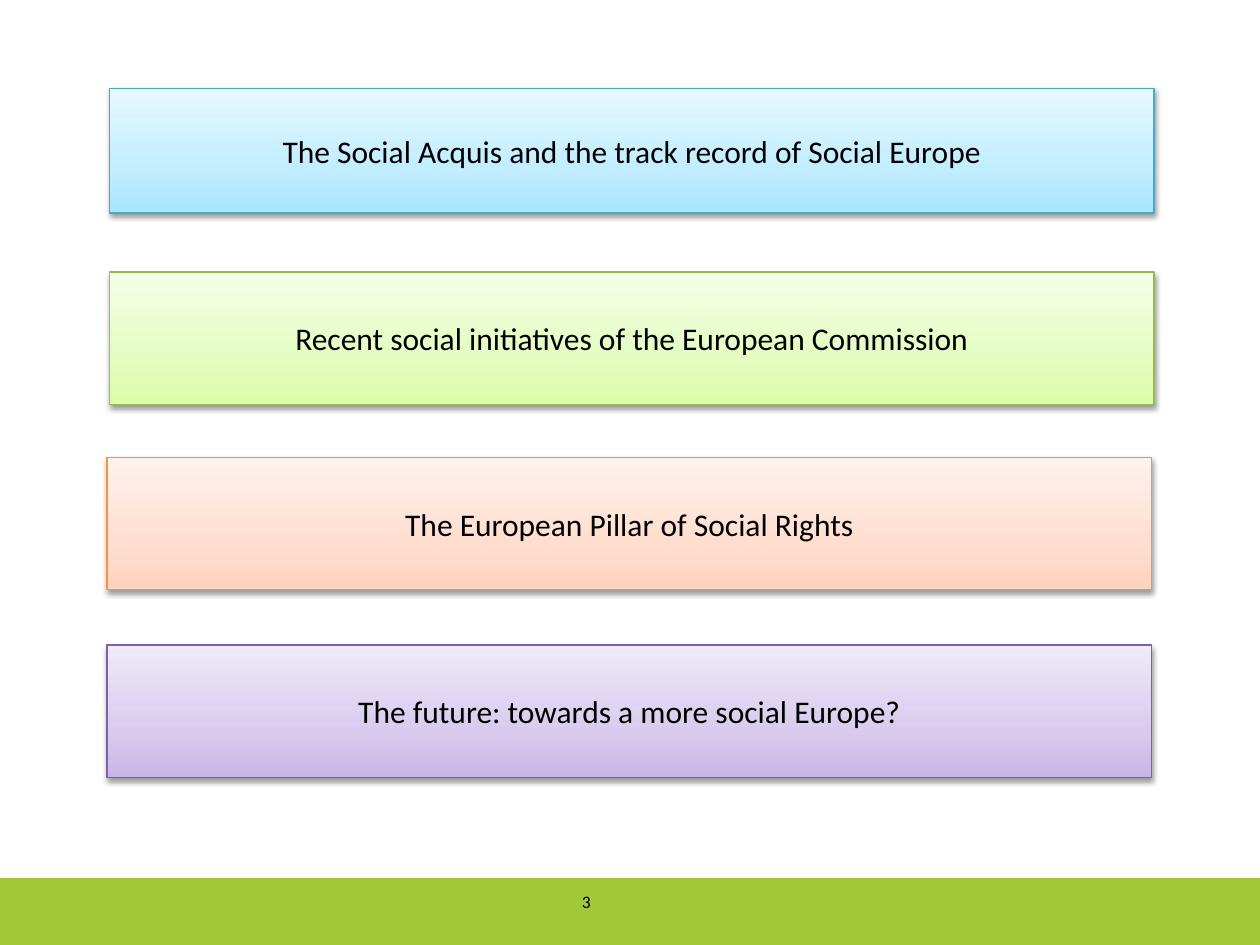
from copy import deepcopy

from pptx import Presentation
from pptx.dml.color import RGBColor
from pptx.enum.shapes import MSO_SHAPE
from pptx.enum.text import MSO_ANCHOR, PP_ALIGN
from pptx.oxml import parse_xml
from pptx.oxml.ns import nsdecls, qn
from pptx.util import Inches, Pt

RECT = MSO_SHAPE.RECTANGLE
MIDDLE = MSO_ANCHOR.MIDDLE
LEFT, CENTER = PP_ALIGN.LEFT, PP_ALIGN.CENTER

COLORS = {
    "text": "000000",
    "footer": "A2C83A",
    "blue": ("46AAC5", "A7E6FF", "C1EDFF", "E7F8FF"),
    "green": ("98B955", "DAFDA7", "E4FCC2", "F5FFE7"),
    "orange": ("F69240", "FFD2BD", "FFDED0", "FFF2ED"),
    "purple": ("7D60A0", "C9B5E8", "D8CBEE", "F0EAF9"),
}
STOPS = (0, 0.35, 1)
SHADOW = (
    f'<a:outerShdw {nsdecls("a")} blurRad="40000" dist="20000" dir="5400000" '
    'rotWithShape="0"><a:srgbClr val="000000"><a:alpha val="38000"/>'
    "</a:srgbClr></a:outerShdw>"
)
TOPICS = [
    ("The Social Acquis and the track record of Social Europe", "blue", 0.87, 0.7, 0.99),
    ("Recent social initiatives of the European Commission", "green", 0.87, 2.16, 1.05),
    ("The European Pillar of Social Rights", "orange", 0.85, 3.63, 1.05),
    ("The future: towards a more social Europe?", "purple", 0.85, 5.12, 1.05),
]


class AgendaSlide:
    """Hold the style and the slide, and draw its elements."""

    def __init__(self, prs):
        self.s = prs.slides.add_slide(prs.slide_layouts[6])
        self.font = {"name": "Calibri", "bold": False}

    def set_text(self, sp, text, size, align):
        """Put one formatted line of text in a shape."""
        tf = sp.text_frame
        tf.word_wrap = True
        tf.vertical_anchor = MIDDLE
        p = tf.paragraphs[0]
        p.alignment = align
        r = p.add_run()
        r.text = text
        for name, value in {**self.font, "size": Pt(size)}.items():
            setattr(r.font, name, value)
        r.font.color.rgb = RGBColor.from_string(COLORS["text"])

    def rect(self, x, y, w, h):
        """Add a rectangle without a shadow."""
        sp = self.s.shapes.add_shape(RECT, *map(Inches, (x, y, w, h)))
        sp.shadow.inherit = False
        return sp

    def footer(self, x, y, w, h):
        """Add the plain footer band."""
        sp = self.rect(x, y, w, h)
        sp.fill.solid()
        sp.fill.fore_color.rgb = RGBColor.from_string(COLORS["footer"])
        sp.line.fill.background()

    def label(self, text, x, y, w, h):
        """Add a small text box."""
        sp = self.s.shapes.add_textbox(*map(Inches, (x, y, w, h)))
        self.set_text(sp, text, 10, LEFT)

    def topic(self, text, color, x, y, h):
        """Add a topic bar with a gradient, an outline and a soft shadow."""
        sp = self.rect(x, y, 8.29, h)
        line, *shades = COLORS[color]
        sp.fill.gradient()
        sp.fill.gradient_angle = 90
        stops = next(sp.element.spPr.iter(qn("a:gsLst")))
        stops.append(deepcopy(stops[-1]))
        for stop, position, shade in zip(sp.fill.gradient_stops, STOPS, shades):
            stop.position = position
            stop.color.rgb = RGBColor.from_string(shade)
        sp.line.color.rgb = RGBColor.from_string(line)
        sp.line.width = Pt(0.75)
        effects = sp.element.spPr.find(qn("a:effectLst"))
        effects.append(parse_xml(SHADOW))
        self.set_text(sp, text, 18, CENTER)


def main():
    """Build and save the agenda slide."""
    prs = Presentation()
    prs.slide_width, prs.slide_height = Inches(10), Inches(7.5)
    agenda = AgendaSlide(prs)
    agenda.footer(0, 6.97, 10, 0.53)
    agenda.label("3", 4.52, 7, 3.35, 0.31)
    for topic in TOPICS:
        agenda.topic(*topic)
    prs.save("out.pptx")


if __name__ == "__main__":
    main()
